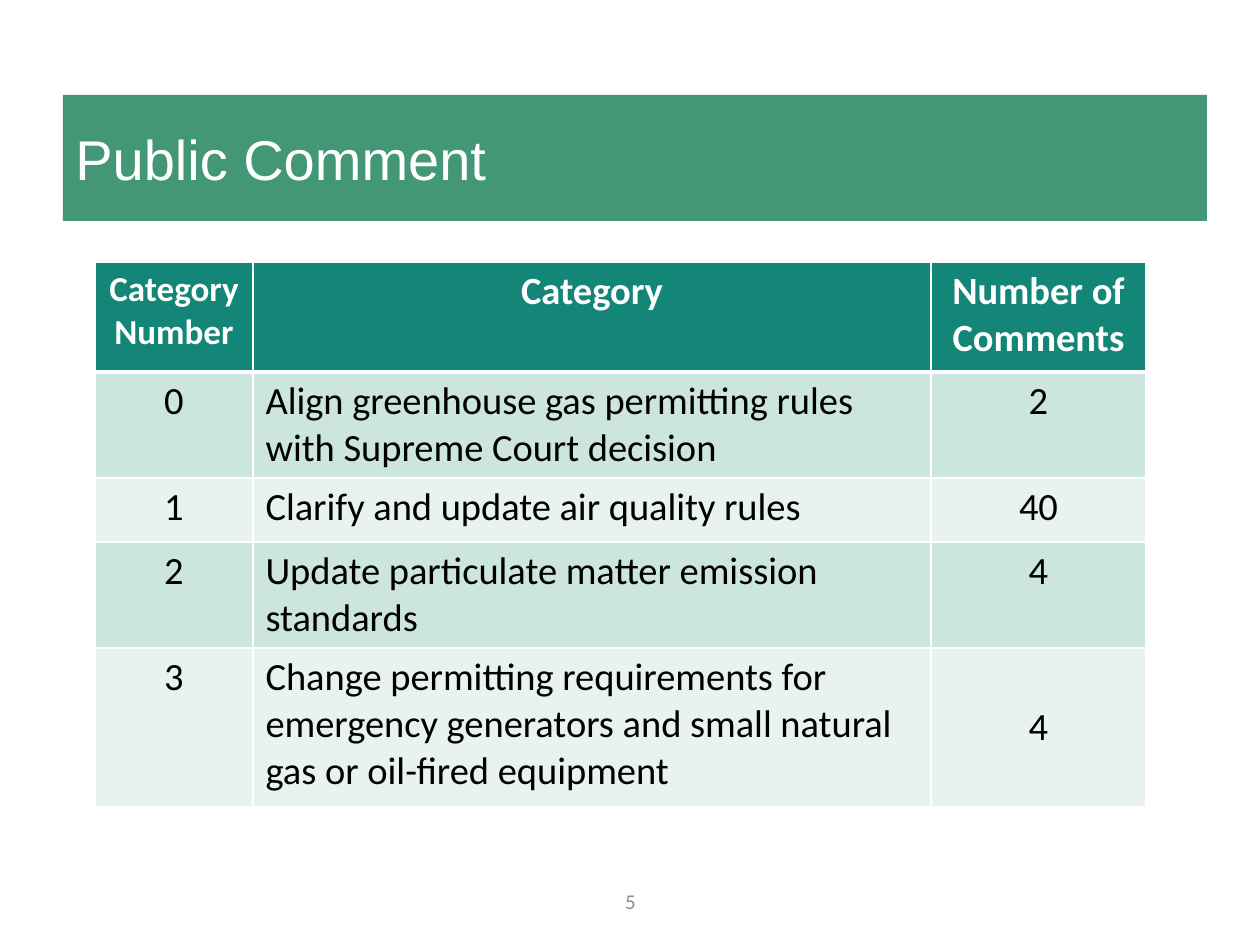
from dataclasses import dataclass

from lxml import etree
from pptx import Presentation
from pptx.dml.color import RGBColor
from pptx.enum.shapes import MSO_SHAPE
from pptx.enum.text import MSO_ANCHOR, PP_ALIGN
from pptx.oxml.ns import qn
from pptx.util import Pt

RECTANGLE = MSO_SHAPE.RECTANGLE
TOP, MIDDLE = MSO_ANCHOR.TOP, MSO_ANCHOR.MIDDLE
LEFT, CENTER = PP_ALIGN.LEFT, PP_ALIGN.CENTER
EMU_PER_PX = 914400 / 126


@dataclass(frozen=True)
class Theme:
    white: str = "FFFFFF"
    black: str = "000000"
    grey: str = "8C8C8C"
    banner: str = "439777"
    header: str = "138677"
    bands: tuple = ("CDE5DF", "E8F2F0")
    title_font: str = "Arial"
    body_font: str = "Calibri"
    title_size: int = 32
    table_size: int = 22
    narrow_size: int = 20
    number_size: int = 12
    thin_border: int = 1
    thick_border: int = 3


THEME = Theme()

COLUMN_WIDTHS = (158, 678, 215)
ROW_HEIGHTS = (110, 106, 64, 106, 159)
HEADINGS = ("Category Number", "Category", "Number of Comments")
COMMENT_ROWS = (
    ("0", "Align greenhouse gas permitting rules with Supreme Court decision", "2"),
    ("1", "Clarify and update air quality rules", "40"),
    ("2", "Update particulate matter emission standards", "4"),
    ("3", "Change permitting requirements for emergency generators "
          "and small natural gas or oil-fired equipment", "4"),
)


def px(length):
    return round(length * EMU_PER_PX)


def box(left, top, width, height):
    return px(left), px(top), px(width), px(height)


def write(frame, text, size, color, font=THEME.body_font, align=LEFT, bold=False):
    frame.word_wrap = True
    paragraph = frame.paragraphs[0]
    paragraph.alignment = align
    run = paragraph.add_run()
    run.text = text
    run.font.size = Pt(size)
    run.font.name = font
    run.font.bold = bold
    run.font.color.rgb = RGBColor.from_string(color)


def add_banner(slide, title):
    banner = slide.shapes.add_shape(RECTANGLE, *box(63, 95, 1144, 126))
    banner.shadow.inherit = False
    banner.fill.solid()
    banner.fill.fore_color.rgb = RGBColor.from_string(THEME.banner)
    banner.line.fill.background()
    banner.text_frame.vertical_anchor = MIDDLE
    write(banner.text_frame, title, THEME.title_size, THEME.white, THEME.title_font)


def add_page_number(slide, number):
    footer = slide.shapes.add_textbox(*box(431, 876, 399, 50)).text_frame
    footer.vertical_anchor = MIDDLE
    write(footer, number, THEME.number_size, THEME.grey, align=CENTER)


def set_borders(cell, top, bottom):
    """Draw white borders; the side lines are always thin."""
    properties = cell._tc.get_or_add_tcPr()
    widths = {"a:lnL": THEME.thin_border, "a:lnR": THEME.thin_border,
              "a:lnT": top, "a:lnB": bottom}
    # Border lines come before the fill in the cell properties
    for position, (tag, width) in enumerate(widths.items()):
        line = etree.Element(qn(tag), w=str(Pt(width)))
        fill = etree.SubElement(line, qn("a:solidFill"))
        etree.SubElement(fill, qn("a:srgbClr"), val=THEME.white)
        properties.insert(position, line)


def fill_cell(cell, text, fill, size, color, align, bold):
    cell.fill.solid()
    cell.fill.fore_color.rgb = RGBColor.from_string(fill)
    cell.vertical_anchor = TOP
    write(cell.text_frame, text, size, color, align=align, bold=bold)


def add_comment_table(slide):
    rows = (HEADINGS, *COMMENT_ROWS)
    table = slide.shapes.add_table(
        len(rows), len(HEADINGS),
        *box(95, 262, sum(COLUMN_WIDTHS), sum(ROW_HEIGHTS))).table
    for column, width in zip(table.columns, COLUMN_WIDTHS):
        column.width = px(width)
    for row, height in zip(table.rows, ROW_HEIGHTS):
        row.height = px(height)

    for r, texts in enumerate(rows):
        is_header = r == 0
        fill = THEME.header if is_header else THEME.bands[(r - 1) % 2]
        color = THEME.white if is_header else THEME.black
        top = THEME.thick_border if r == 1 else THEME.thin_border
        bottom = THEME.thick_border if is_header else THEME.thin_border
        for c, text in enumerate(texts):
            size = THEME.narrow_size if is_header and c == 0 else THEME.table_size
            align = LEFT if c == 1 and not is_header else CENTER
            cell = table.cell(r, c)
            fill_cell(cell, text, fill, size, color, align, is_header)
            set_borders(cell, top, bottom)

    # The last count sits beside the middle line of its category
    table.cell(len(rows) - 1, 2).vertical_anchor = MIDDLE


def main():
    presentation = Presentation()
    presentation.slide_width, presentation.slide_height = px(1260), px(945)
    slide = presentation.slides.add_slide(presentation.slide_layouts[6])

    # Footer, title and table
    add_page_number(slide, "5")
    add_banner(slide, "Public Comment")
    add_comment_table(slide)

    presentation.save("out.pptx")


if __name__ == "__main__":
    main()
